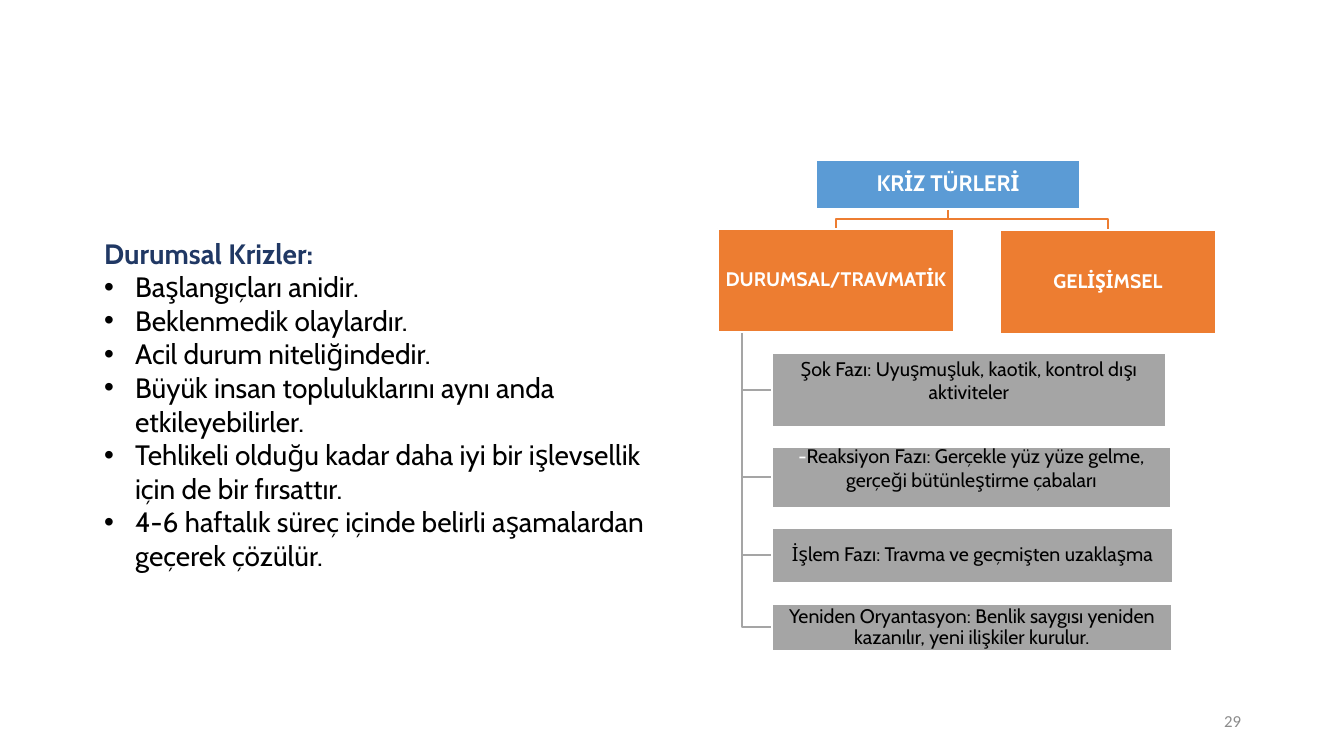
from lxml.etree import SubElement
from pptx import Presentation
from pptx.dml.color import RGBColor
from pptx.enum.shapes import MSO_SHAPE as SHAPE
from pptx.enum.text import MSO_ANCHOR as ANCHOR, MSO_AUTO_SIZE as AUTO, PP_ALIGN as ALIGN
from pptx.oxml.ns import qn
from pptx.util import Pt

PX = 914400 / 100.8  # EMU in one pixel
BLUE, ORANGE, GREY = "5B9BD5", "ED7D31", "A5A5A5"
WHITE, BLACK, NAVY = "FFFFFF", "000000", "203864"


def px(*lengths):
    return [round(n * PX) for n in lengths]


def add_text(p, text, size=14, color=BLACK, bold=False, font="Cabin",
             align=ALIGN.LEFT, spacing=1.0):
    p.alignment, p.line_spacing = align, spacing
    p.space_before = p.space_after = Pt(0)
    r = p.add_run()
    r.text = text
    r.font.size, r.font.bold, r.font.name = Pt(size), bold, font
    r.font.color.rgb = RGBColor.from_string(color)


prs = Presentation()
prs.slide_width, prs.slide_height = px(1344, 756)
s = prs.slides.add_slide(prs.slide_layouts[1])
title = s.shapes.title.element
title.getparent().remove(title)

# List of situational crises
body = s.placeholders[1]
body.left, body.top, body.width, body.height = px(94, 231, 562, 350)
tf = body.text_frame
tf.auto_size, tf.vertical_anchor = AUTO.NONE, ANCHOR.TOP
lines = [
    "Durumsal Krizler:",
    "Başlangıçları anidir.",
    "Beklenmedik olaylardır.",
    "Acil durum niteliğindedir.",
    "Büyük insan topluluklarını aynı anda etkileyebilirler.",
    "Tehlikeli olduğu kadar daha iyi bir işlevsellik için de bir fırsattır.",
    "4-6 haftalık süreç içinde belirli aşamalardan geçerek çözülür.",
]
for i, line in enumerate(lines):
    heading = i == 0
    p = tf.paragraphs[0] if heading else tf.add_paragraph()
    add_text(p, line, size=20, color=NAVY if heading else BLACK, bold=heading)
    pPr = p._p.get_or_add_pPr()
    indent = 0 if heading else px(31)[0]
    pPr.set("marL", str(indent))
    pPr.set("indent", str(-indent))
    if heading:
        SubElement(pPr, qn("a:buNone"))
    else:
        SubElement(pPr, qn("a:buChar")).set("char", "•")

# Branches of the tree
branches = [(GREY, [(742, 332), (742, y), (772, y)]) for y in (627, 555, 477, 390)]
branches += [(ORANGE, [(948, 210), (948, 219), (x, 219), (x, 229)]) for x in (1108, 836)]
for color, points in branches:
    builder = s.shapes.build_freeform(*points[0], scale=PX)
    builder.add_line_segments(points[1:], close=False)
    branch = builder.convert_to_shape()
    branch.shadow.inherit = False
    branch.fill.background()
    branch.line.color.rgb = RGBColor.from_string(color)
    branch.line.width = Pt(1)

# Boxes of the tree: place, fill, room below the text, line spacing, runs
head = dict(color=WHITE, bold=True)
boxes = [
    ((816, 160, 264, 49), BLUE, 1, 0.9, [("KRİZ TÜRLERİ", dict(head, size=16))]),
    ((718, 229, 236, 103), ORANGE, 1, 0.9, [("DURUMSAL/TRAVMATİK", head)]),
    ((1000, 230, 216, 104), ORANGE, 1, 0.9, [("GELİŞİMSEL", head)]),
    ((772, 353, 394, 74), GREY, 21, 1.0,
     [("Şok Fazı: Uyuşmuşluk, kaotik, kontrol dışı aktiviteler", {})]),
    ((772, 447, 399, 61), GREY, 21, 1.0,
     [("-", dict(color=WHITE)),
      ("Reaksiyon Fazı: Gerçekle yüz yüze gelme, gerçeği bütünleştirme çabaları", {})]),
    ((772, 528, 401, 55), GREY, 1, 0.9,
     [("İşlem Fazı: Travma ve geçmişten uzaklaşma", {})]),
    ((772, 604, 400, 47), GREY, 1, 0.9,
     [("Yeniden Oryantasyon: Benlik saygısı yeniden kazanılır, yeni ilişkiler kurulur.", {})]),
]
for place, fill, below, spacing, runs in boxes:
    box = s.shapes.add_shape(SHAPE.RECTANGLE, *px(*place))
    box.shadow.inherit = False
    box.fill.solid()
    box.fill.fore_color.rgb = RGBColor.from_string(fill)
    box.line.color.rgb = RGBColor.from_string(WHITE)
    box.line.width = Pt(1)
    tf = box.text_frame
    tf.word_wrap, tf.vertical_anchor = True, ANCHOR.MIDDLE
    tf.margin_left, tf.margin_top, tf.margin_right, tf.margin_bottom = px(1, 1, 1, below)
    for text, style in runs:
        add_text(tf.paragraphs[0], text, align=ALIGN.CENTER, spacing=spacing, **style)

# Slide number
number = s.shapes.add_textbox(*px(949, 701, 302, 40))
tf = number.text_frame
tf.word_wrap, tf.vertical_anchor = True, ANCHOR.MIDDLE
add_text(tf.paragraphs[0], "29", size=12, color="8C8C8C", font="Calibri", align=ALIGN.RIGHT)

prs.save("out.pptx")
